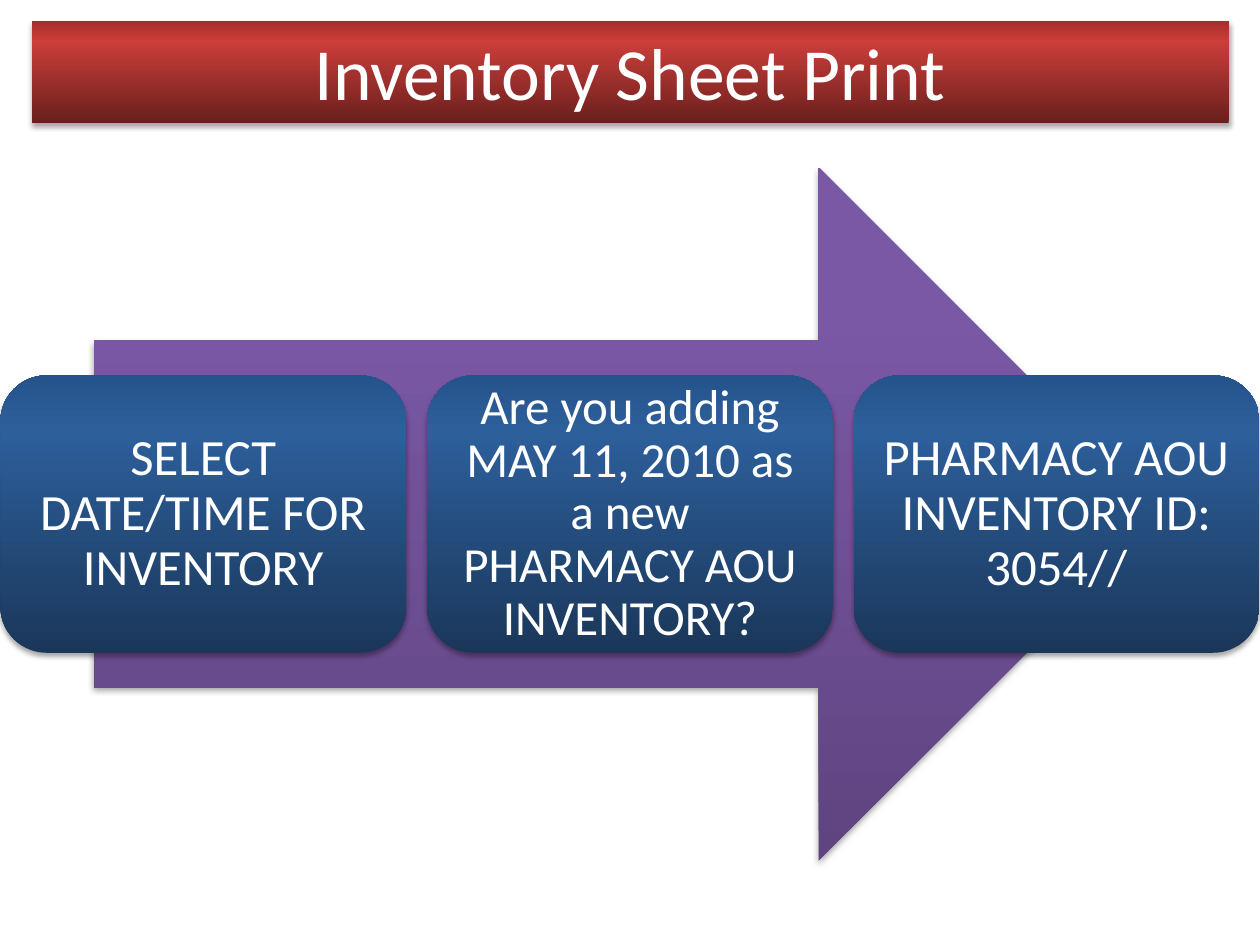
from lxml import etree
from pptx import Presentation
from pptx.dml.color import RGBColor
from pptx.enum.shapes import MSO_SHAPE as Shape
from pptx.enum.text import MSO_ANCHOR as Anchor, PP_ALIGN as Align
from pptx.oxml import parse_xml
from pptx.oxml.ns import nsdecls, qn
from pptx.util import Cm, Pt

WHITE = RGBColor(0xFF, 0xFF, 0xFF)
# Gradients run from the bottom edge (0 %) through 80 % to the top (100 %)
REDS = RGBColor(0x69, 0x1F, 0x1D), RGBColor(0xCB, 0x3E, 0x3A), RGBColor(0xA7, 0x2C, 0x29)
PURPLES = RGBColor(0x5F, 0x44, 0x80), RGBColor(0x7B, 0x58, 0xA6), RGBColor(0x7C, 0x57, 0xA8)
BLUES = RGBColor(0x1A, 0x37, 0x5A), RGBColor(0x2D, 0x5F, 0x9B), RGBColor(0x25, 0x53, 0x8B)

SLIDE_W, SLIDE_H = 25.4, 19.05
STEP_W, STEP_H, STEP_TOP, STEP_PITCH = 8.18, 5.59, 7.57, 8.6


def write_text(shape, text, size, anchor=Anchor.MIDDLE, spacing=1.0, inset=0.13, side_inset=0.25):
    frame = shape.text_frame
    frame.word_wrap = True
    frame.vertical_anchor = anchor
    frame.margin_top = frame.margin_bottom = Cm(inset)
    frame.margin_left = frame.margin_right = Cm(side_inset)
    paragraph = frame.paragraphs[0]
    paragraph.alignment = Align.CENTER
    paragraph.line_spacing = spacing
    run = paragraph.add_run()
    run.text = text
    run.font.name = "Calibri"
    run.font.size = Pt(size)
    run.font.color.rgb = WHITE


class SlideBuilder:
    def __init__(self, slide):
        self.slide = slide

    def block(self, preset, left, top, width, height, colors):
        """Add a borderless shape with a vertical gradient and a soft shadow."""
        shape = self.slide.shapes.add_shape(preset, Cm(left), Cm(top), Cm(width), Cm(height))
        shape.line.fill.background()
        self.paint(shape, colors)
        self.cast_shadow(shape)
        return shape

    def paint(self, shape, colors):
        shape.fill.gradient()
        gradient = shape.fill._fill._gradFill
        stops = gradient.find(qn("a:gsLst"))
        for stop in list(stops):
            stops.remove(stop)
        for position, color in zip((0, 80, 100), colors):
            stop = etree.SubElement(stops, qn("a:gs"), pos=str(position * 1000))
            etree.SubElement(stop, qn("a:srgbClr"), val=str(color))
        shape.fill.gradient_angle = 90

    def cast_shadow(self, shape):
        shape.shadow.inherit = False
        effects = shape.element.spPr.find(qn("a:effectLst"))
        effects.append(parse_xml(
            f'<a:outerShdw {nsdecls("a")} blurRad="{Pt(3.1)}" dist="{Pt(1.8)}" dir="5400000" '
            'rotWithShape="0"><a:srgbClr val="000000"><a:alpha val="35000"/></a:srgbClr></a:outerShdw>'))

    def title(self, text):
        banner = self.block(Shape.RECTANGLE, 0.64, 0.42, 24.13, 2.06, REDS)
        write_text(banner, text, size=42, anchor=Anchor.TOP)

    def arrow(self):
        self.block(Shape.RIGHT_ARROW, 1.9, 3.38, 21.59, 13.97, PURPLES)

    def step(self, index, text, size):
        box = self.block(Shape.ROUNDED_RECTANGLE, index * STEP_PITCH + 0.01, STEP_TOP,
                         STEP_W, STEP_H, BLUES)
        write_text(box, text, size=size, spacing=0.9, inset=0.3, side_inset=0.3)


def main():
    deck = Presentation()
    deck.slide_width, deck.slide_height = Cm(SLIDE_W), Cm(SLIDE_H)
    builder = SlideBuilder(deck.slides.add_slide(deck.slide_layouts[6]))

    # Title banner
    builder.title("Inventory Sheet Print")

    # Process arrow with its three steps
    builder.arrow()
    steps = [
        ("SELECT DATE/TIME FOR INVENTORY", 29),
        ("Are you adding MAY 11, 2010 as a new PHARMACY AOU INVENTORY?", 28),
        ("PHARMACY AOU INVENTORY ID: 3054//", 29),
    ]
    for index, (text, size) in enumerate(steps):
        builder.step(index, text, size)

    deck.save("out.pptx")


if __name__ == "__main__":
    main()
